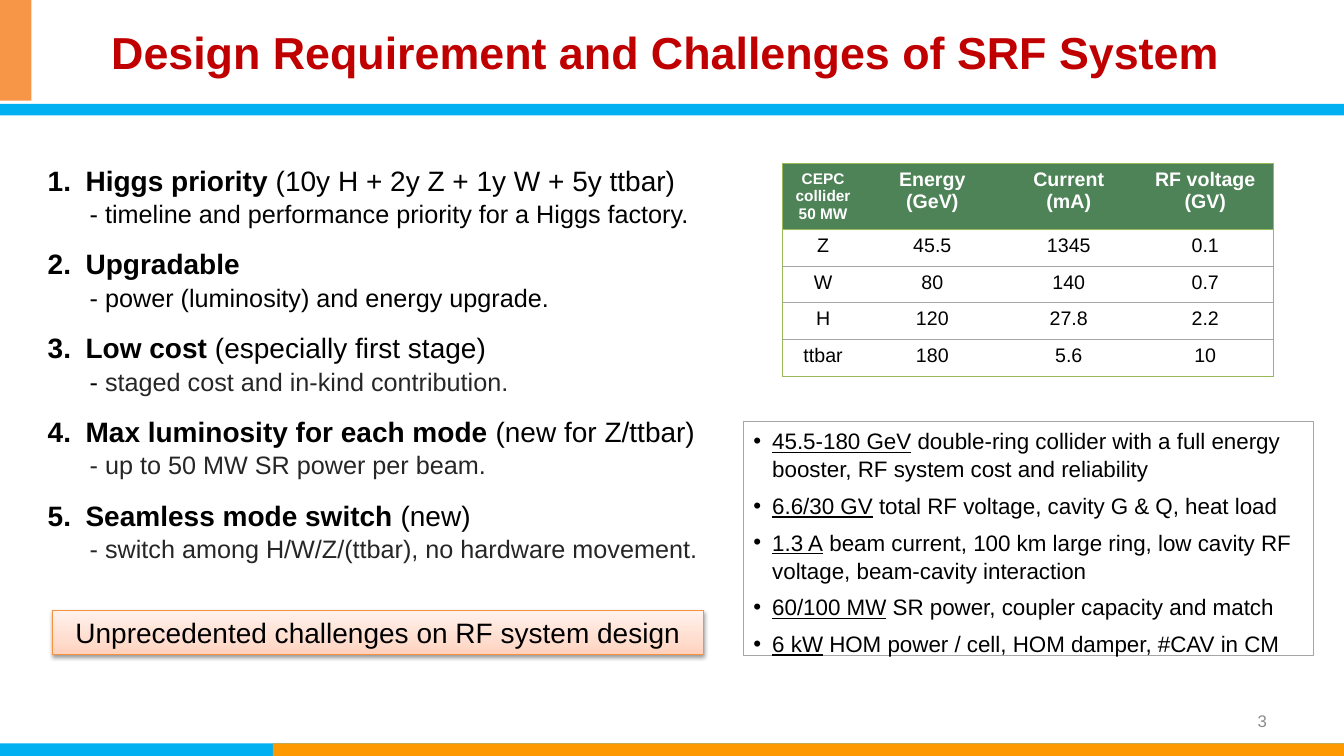
from lxml.etree import SubElement as Sub
from pptx import Presentation
from pptx.dml.color import RGBColor as Rgb
from pptx.enum.shapes import MSO_SHAPE as Shape
from pptx.enum.text import MSO_ANCHOR as Anchor, PP_ALIGN as Align
from pptx.oxml import parse_xml
from pptx.oxml.ns import nsdecls, qn
from pptx.util import Emu, Pt

PX = 9525
FONT = "Arial"
PLAIN = "{2D5ABB26-0587-4C30-8999-92F81FD0307C}"
HUE = {
    "sky": "00B0F0", "amber": "FF9900", "orange": "F79646", "red": "C00000",
    "black": "000000", "dark": "262626", "white": "FFFFFF", "page": "8C8C8C",
    "green": "4D8357", "lime": "98B955", "gray": "A6A6A6", "rim": "F69240",
    "deep": "FFD2BD", "mid": "FFDED0", "pale": "FFF2ED",
}
GOALS = [
    ("Higgs priority ", "(10y H + 2y Z + 1y W + 5y ttbar)",
     "timeline and performance priority for a Higgs factory.", "black", "black"),
    ("Upgradable", "", "power (luminosity) and energy upgrade.", "black", "black"),
    ("Low cost ", "(especially first stage)",
     "staged cost and in-kind contribution.", "black", "dark"),
    ("Max luminosity for each mode ", "(new for Z/ttbar)",
     "up to 50 MW SR power per beam.", "dark", "dark"),
    ("Seamless mode switch ", "(new)",
     "switch among H/W/Z/(ttbar), no hardware movement.", "dark", "dark"),
]
TASKS = [
    ("45.5-180 GeV", " double-ring collider with a full energy booster, "
     "RF system cost and reliability"),
    ("6.6/30 GV", " total RF voltage, cavity G & Q, heat load"),
    ("1.3 A", " beam current, 100 km large ring, low cavity RF voltage, "
     "beam-cavity interaction"),
    ("60/100 MW", " SR power, coupler capacity and match"),
    ("6 kW", " HOM power / cell, HOM damper, #CAV in CM"),
]
HEADS = [["CEPC", "collider", "50 MW"], ["Energy (GeV)"],
         ["Current", "(mA)"], ["RF voltage (GV)"]]
MODES = [
    ("Z", "45.5", "1345", "0.1"),
    ("W", "80", "140", "0.7"),
    ("H", "120", "27.8", "2.2"),
    ("ttbar", "180", "5.6", "10"),
]


def px(*nums):
    return [Emu(n * PX) for n in nums]


def tint(name):
    return Rgb.from_string(HUE[name])


def write(para, text, size, hue="black", bold=False, under=False):
    run = para.add_run()
    run.text = text
    font = run.font
    font.name, font.size, font.bold, font.underline = FONT, Pt(size), bold, under
    font.color.rgb = tint(hue)


def next_para(frame, index):
    return frame.add_paragraph() if index else frame.paragraphs[0]


def indent(para, left, hang=0):
    props = para._p.get_or_add_pPr()
    props.set("marL", str(left * PX))
    props.set("indent", str(-hang * PX))
    return props


def add_rect(slide, box, fill=None, line=None):
    rect = slide.shapes.add_shape(Shape.RECTANGLE, *px(*box))
    rect.shadow.inherit = False
    if fill:
        rect.fill.solid()
        rect.fill.fore_color.rgb = tint(fill)
    else:
        rect.fill.background()
    if line:
        rect.line.color.rgb = tint(line)
        rect.line.width = Pt(0.75)
    else:
        rect.line.fill.background()
    rect.text_frame.word_wrap = True
    return rect


def add_text(slide, box):
    frame = slide.shapes.add_textbox(*px(*box)).text_frame
    frame.word_wrap = True
    return frame


def add_title(slide, text):
    title = slide.shapes.title
    title.left, title.top, title.width, title.height = px(0, 0, 1280, 98)
    frame = title.text_frame
    frame.vertical_anchor = Anchor.MIDDLE
    para = frame.paragraphs[0]
    para.alignment = Align.CENTER
    write(para, text, 32, "red", bold=True)


def add_goals(slide, box):
    frame = add_text(slide, box)
    for index, (name, note, gloss, dash, hue) in enumerate(GOALS):
        head = next_para(frame, index)
        Sub(indent(head, 36, 36), qn("a:buAutoNum"),
            type="arabicPeriod", startAt=str(index + 1))
        if index:
            head.space_before = Pt(12)
        write(head, name, 20, bold=True)
        if note:
            write(head, note, 20)
        body = frame.add_paragraph()
        indent(body, 40)
        write(body, "- ", 18, dash)
        write(body, gloss, 18, hue)
        head.line_spacing = body.line_spacing = 1.05


def add_tasks(slide, box):
    frame = add_rect(slide, box, line="gray").text_frame
    frame.vertical_anchor = Anchor.TOP
    for index, (key, rest) in enumerate(TASKS):
        para = next_para(frame, index)
        props = indent(para, 18, 18)
        Sub(props, qn("a:buFont"), typeface=FONT)
        Sub(props, qn("a:buChar"), char="•")
        para.alignment = Align.LEFT
        para.line_spacing = 1.05
        if index:
            para.space_before = Pt(6)
        write(para, key, 16, under=True)
        write(para, rest, 16)


def add_banner(slide, box, text):
    rect = add_rect(slide, box, "mid", "rim")
    stops = "".join(
        f'<a:gs pos="{pos}000"><a:srgbClr val="{HUE[hue]}"/></a:gs>'
        for pos, hue in ((0, "deep"), (35, "mid"), (100, "pale")))
    props = rect._element.spPr
    props.replace(props.find(qn("a:solidFill")), parse_xml(
        f'<a:gradFill {nsdecls("a")} rotWithShape="1"><a:gsLst>{stops}</a:gsLst>'
        '<a:lin ang="16200000" scaled="0"/></a:gradFill>'))
    shade = Sub(props.find(qn("a:effectLst")), qn("a:outerShdw"), blurRad="40000",
                dist="20000", dir="5400000", rotWithShape="0")
    Sub(Sub(shade, qn("a:srgbClr"), val=HUE["black"]), qn("a:alpha"), val="38000")
    para = rect.text_frame.paragraphs[0]
    para.alignment = Align.CENTER
    write(para, text, 20)


def edge(cell, side, hue):
    line = Sub(cell._tc.get_or_add_tcPr(), qn("a:ln" + side), w=str(Pt(0.75)))
    Sub(Sub(line, qn("a:solidFill")), qn("a:srgbClr"), val=HUE[hue])


def add_modes(slide, box):
    rows = [HEADS] + [[[text] for text in row] for row in MODES]
    last, end = len(rows) - 1, len(HEADS) - 1
    frame = slide.shapes.add_table(last + 1, end + 1, *px(*box))
    table = frame.table
    table._tbl.tblPr.find(qn("a:tableStyleId")).text = PLAIN
    table.first_row = table.horz_banding = False
    for col, wide in zip(table.columns, px(78, 130, 130, 130)):
        col.width = wide
    for row, high in zip(table.rows, px(62, 35, 35, 35, 35)):
        row.height = high
    for r, row in enumerate(rows):
        for c, lines in enumerate(row):
            cell = table.cell(r, c)
            if c == 0:
                edge(cell, "L", "lime")
            if c == end:
                edge(cell, "R", "lime")
            edge(cell, "T", "lime" if r < 2 else "gray")
            edge(cell, "B", "lime" if r in (0, last) else "gray")
            if r:
                cell.fill.background()
            else:
                cell.fill.solid()
                cell.fill.fore_color.rgb = tint("green")
            small = r == 0 and c == 0
            cell.vertical_anchor = Anchor.MIDDLE if small else Anchor.TOP
            for index, text in enumerate(lines):
                para = next_para(cell.text_frame, index)
                para.alignment = Align.CENTER
                write(para, text, 11 if small else 14,
                      "black" if r else "white", bold=r == 0)


def add_page(slide, box, text):
    frame = add_text(slide, box)
    frame.vertical_anchor = Anchor.MIDDLE
    para = frame.paragraphs[0]
    para.alignment = Align.RIGHT
    write(para, text, 12, "page")


def main():
    deck = Presentation()
    deck.slide_width, deck.slide_height = px(1280, 720)
    slide = deck.slides.add_slide(deck.slide_layouts[5])
    add_rect(slide, (0, 708, 1280, 12), "sky")
    add_rect(slide, (260, 708, 1020, 12), "amber")
    add_rect(slide, (0, 99, 1280, 11), "sky")
    add_rect(slide, (0, 0, 30, 96), "orange")
    add_title(slide, "Design Requirement and Challenges of SRF System ")
    add_goals(slide, (36, 149, 770, 381))
    add_banner(slide, (50, 581, 620, 42), "Unprecedented challenges on RF system design")
    add_modes(slide, (745, 156, 468, 202))
    add_tasks(slide, (708, 401, 543, 223))
    add_page(slide, (918, 667, 298, 38), "3")
    deck.save("out.pptx")


if __name__ == "__main__":
    main()
